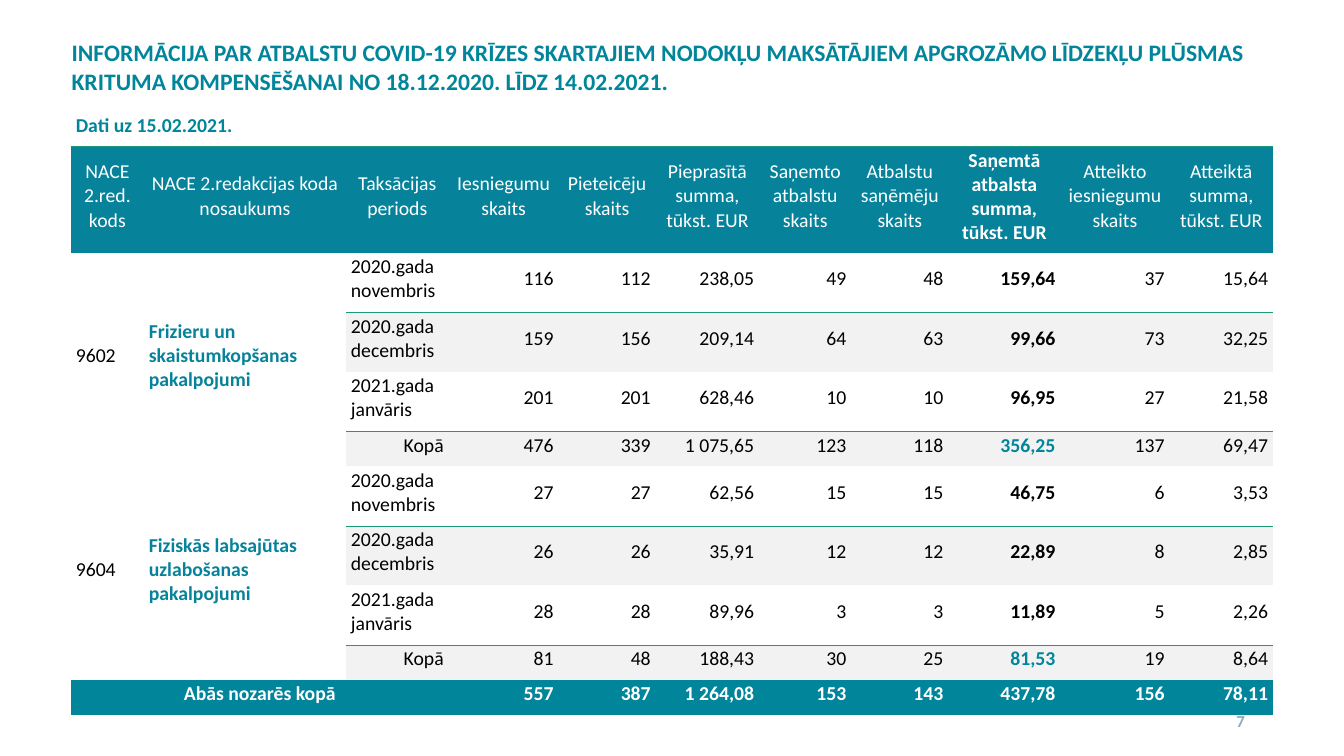
from lxml.etree import SubElement
from pptx import Presentation
from pptx.dml.color import RGBColor
from pptx.enum.text import MSO_ANCHOR, MSO_AUTO_SIZE, PP_ALIGN
from pptx.oxml.ns import qn
from pptx.util import Inches, Pt

TEAL = RGBColor(0x00, 0x85, 0x9B)
HEADER_TEAL = RGBColor(0x06, 0x82, 0x9A)
RULE_GREEN = RGBColor(0x1D, 0x9A, 0x78)
BAND_GREY = RGBColor(0xF2, 0xF2, 0xF2)
PAGE_GREY = RGBColor(0x8C, 0xAE, 0xBB)
BLACK = RGBColor(0, 0, 0)
WHITE = RGBColor(255, 255, 255)

NO_STYLE = "{2D5ABB26-0587-4C30-8999-92F81FD0307C}"
TITLE = ("INFORMĀCIJA PAR ATBALSTU COVID-19 KRĪZES SKARTAJIEM NODOKĻU MAKSĀTĀJIEM "
         "APGROZĀMO LĪDZEKĻU PLŪSMAS KRITUMA KOMPENSĒŠANAI NO 18.12.2020. LĪDZ 14.02.2021.")
HEADERS = ["NACE 2.red. kods", "NACE 2.redakcijas koda nosaukums", "Taksācijas periods",
           "Iesniegumu skaits", "Pieteicēju skaits", "Pieprasītā summa,\ntūkst. EUR",
           "Saņemto atbalstu skaits", "Atbalstu saņēmēju skaits",
           "Saņemtā atbalsta summa,\ntūkst. EUR", "Atteikto iesniegumu skaits",
           "Atteiktā summa,\ntūkst. EUR"]
PERIODS = ["2020.gada novembris", "2020.gada decembris", "2021.gada janvāris", "Kopā"]
INDUSTRIES = [
    ("9602", "Frizieru un skaistumkopšanas pakalpojumi", [
        ["116", "112", "238,05", "49", "48", "159,64", "37", "15,64"],
        ["159", "156", "209,14", "64", "63", "99,66", "73", "32,25"],
        ["201", "201", "628,46", "10", "10", "96,95", "27", "21,58"],
        ["476", "339", "1 075,65", "123", "118", "356,25", "137", "69,47"]]),
    ("9604", "Fiziskās labsajūtas uzlabošanas pakalpojumi", [
        ["27", "27", "62,56", "15", "15", "46,75", "6", "3,53"],
        ["26", "26", "35,91", "12", "12", "22,89", "8", "2,85"],
        ["28", "28", "89,96", "3", "3", "11,89", "5", "2,26"],
        ["81", "48", "188,43", "30", "25", "81,53", "19", "8,64"]]),
]
TOTALS = ["557", "387", "1 264,08", "153", "143", "437,78", "156", "78,11"]

COLUMN_WIDTHS = [1.03, 2.85, 1.45, 1.55, 1.37, 1.46, 1.3, 1.37, 1.58, 1.54, 1.46]
INDUSTRY_HEIGHTS = [0.84, 0.84, 0.84, 0.49]
ROW_HEIGHTS = [0.5, 1.5] + INDUSTRY_HEIGHTS * len(INDUSTRIES) + [0.49]
PERIOD_COLUMN, FIRST_VALUE_COLUMN, RECEIVED_COLUMN = 2, 3, 8
FIRST_DATA_ROW = 2


def set_attributes(target, values):
    for name, value in values.items():
        setattr(target, name, value)


def write_text(text_frame, text, size, color, bold=False, align=PP_ALIGN.LEFT):
    paragraph = text_frame.paragraphs[0]
    paragraph.text = text
    paragraph.alignment = align
    for run in paragraph.runs:
        set_attributes(run.font, {"name": "Calibri", "size": Pt(size), "bold": bold})
        run.font.color.rgb = color


def fill_cell(cell, color):
    cell.fill.solid()
    cell.fill.fore_color.rgb = color


def write_cell(cell, text, color=BLACK, bold=False, align=PP_ALIGN.LEFT,
               anchor=MSO_ANCHOR.MIDDLE):
    set_attributes(cell, {
        "margin_left": Inches(0.07), "margin_right": Inches(0.07),
        "margin_top": Inches(0.03), "margin_bottom": Inches(0.13),
        "vertical_anchor": anchor})
    write_text(cell.text_frame, text, 20, color, bold, align)


def add_bottom_rule(cell):
    properties = cell._tc.get_or_add_tcPr()
    line = SubElement(properties, qn("a:lnB"), w=str(Pt(1)))
    fill = SubElement(line, qn("a:solidFill"))
    SubElement(fill, qn("a:srgbClr"), val=str(RULE_GREEN))
    properties.insert(0, line)


def add_title(slide):
    title = slide.shapes.title
    set_attributes(title, {"left": Inches(0.91), "top": Inches(0.49),
                           "width": Inches(17.15), "height": Inches(0.91)})
    set_attributes(title.text_frame, {
        "word_wrap": True, "auto_size": MSO_AUTO_SIZE.NONE,
        "vertical_anchor": MSO_ANCHOR.TOP})
    write_text(title.text_frame, TITLE, 24, TEAL, bold=True)


def add_page_number(slide):
    box = slide.shapes.add_textbox(Inches(13.39), Inches(9.89), Inches(4.27), Inches(0.57))
    set_attributes(box.text_frame, {"word_wrap": True, "vertical_anchor": MSO_ANCHOR.MIDDLE})
    write_text(box.text_frame, "7", 17.1, PAGE_GREY, bold=True, align=PP_ALIGN.RIGHT)
    box.text_frame.paragraphs[0].space_after = Pt(6)


def add_empty_table(slide):
    frame = slide.shapes.add_table(
        len(ROW_HEIGHTS), len(COLUMN_WIDTHS), Inches(1), Inches(1.57),
        Inches(sum(COLUMN_WIDTHS)), Inches(sum(ROW_HEIGHTS)))
    table = frame.table
    set_attributes(table, {"first_row": False, "horz_banding": False})
    table._tbl.tblPr.find(qn("a:tableStyleId")).text = NO_STYLE
    for column, width in zip(table.columns, COLUMN_WIDTHS):
        column.width = Inches(width)
    for row, height in zip(table.rows, ROW_HEIGHTS):
        row.height = Inches(height)
    for cell in table.iter_cells():
        cell.fill.background()
    return table


def fill_header(table):
    table.cell(0, 0).merge(table.cell(0, 1))
    write_cell(table.cell(0, 0), "Dati uz 15.02.2021.", TEAL, True, anchor=MSO_ANCHOR.BOTTOM)
    for column, header in enumerate(HEADERS):
        add_bottom_rule(table.cell(0, column))
        cell = table.cell(1, column)
        fill_cell(cell, HEADER_TEAL)
        write_cell(cell, header, WHITE, column == RECEIVED_COLUMN, PP_ALIGN.CENTER)


def fill_industry(table, first_row, code, name, value_rows):
    # Code and name span all periods
    last_row = first_row + len(PERIODS) - 1
    for column in (0, 1):
        table.cell(first_row, column).merge(table.cell(last_row, column))
    write_cell(table.cell(first_row, 0), code)
    write_cell(table.cell(first_row, 1), name, HEADER_TEAL, True)

    # Periods alternate between ruled and grey rows
    for index, (period, values) in enumerate(zip(PERIODS, value_rows)):
        is_sum = index == len(PERIODS) - 1
        for column, text in enumerate([period] + values, PERIOD_COLUMN):
            cell = table.cell(first_row + index, column)
            received = column == RECEIVED_COLUMN
            left = column == PERIOD_COLUMN and not is_sum
            write_cell(cell, text, TEAL if received and is_sum else BLACK, received,
                       PP_ALIGN.LEFT if left else PP_ALIGN.RIGHT)
            if index % 2:
                fill_cell(cell, BAND_GREY)
            else:
                add_bottom_rule(cell)


def fill_totals(table):
    row = len(ROW_HEIGHTS) - 1
    for column in range(len(COLUMN_WIDTHS)):
        fill_cell(table.cell(row, column), TEAL)
    table.cell(row, 0).merge(table.cell(row, PERIOD_COLUMN))
    write_cell(table.cell(row, 0), "Abās nozarēs kopā", WHITE, True, PP_ALIGN.CENTER)
    for column, text in enumerate(TOTALS, FIRST_VALUE_COLUMN):
        write_cell(table.cell(row, column), text, WHITE, True, PP_ALIGN.RIGHT)


def main():
    presentation = Presentation()
    set_attributes(presentation, {"slide_width": Inches(18.96), "slide_height": Inches(10.67)})
    slide = presentation.slides.add_slide(presentation.slide_layouts[5])
    add_title(slide)
    add_page_number(slide)

    # Support table
    table = add_empty_table(slide)
    fill_header(table)
    for index, industry in enumerate(INDUSTRIES):
        fill_industry(table, FIRST_DATA_ROW + index * len(PERIODS), *industry)
    fill_totals(table)
    presentation.save("out.pptx")


if __name__ == "__main__":
    main()
